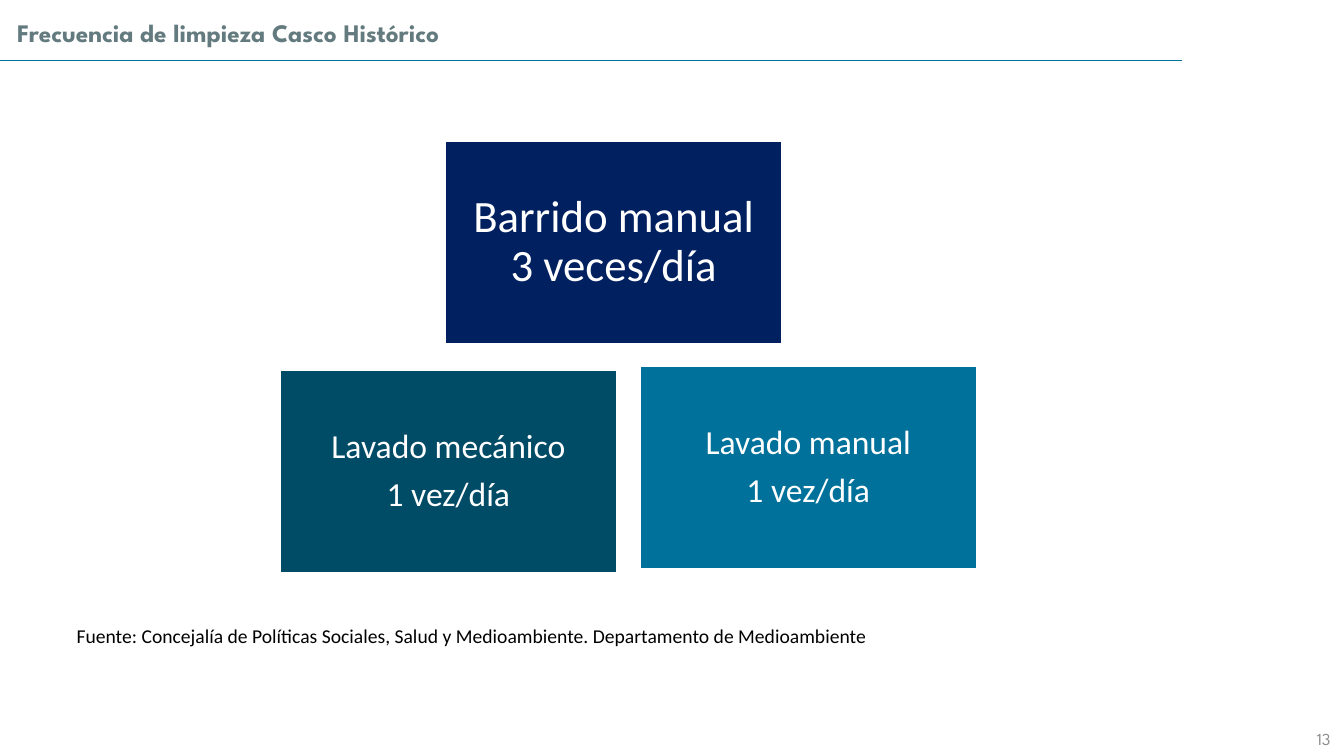
from lxml import etree
from pptx import Presentation
from pptx.dml.color import RGBColor
from pptx.enum.shapes import MSO_CONNECTOR, MSO_SHAPE
from pptx.enum.text import MSO_ANCHOR, PP_ALIGN
from pptx.oxml.ns import qn
from pptx.util import Cm, Pt

LEFT, CENTER, RIGHT = PP_ALIGN.LEFT, PP_ALIGN.CENTER, PP_ALIGN.RIGHT
TOP, MIDDLE, BOTTOM = MSO_ANCHOR.TOP, MSO_ANCHOR.MIDDLE, MSO_ANCHOR.BOTTOM
RECT = MSO_SHAPE.RECTANGLE
STRAIGHT = MSO_CONNECTOR.STRAIGHT
HEADING_FONT, BODY_FONT = "League Spartan", "Calibri"
TILE_W, TILE_H = 8.48, 5.11


def rgb(value):
    return RGBColor.from_string(value)


def write(tf, text, size, color, font=BODY_FONT, bold=False, align=LEFT,
          spacing=None, after=None):
    for i, line in enumerate(text.split("\n")):
        p = tf.add_paragraph() if i else tf.paragraphs[0]
        p.alignment = align
        p.line_spacing = spacing
        p.space_after = None if after is None else Pt(after)
        r = p.add_run()
        r.text = line
        r.font.name = font
        r.font.size = Pt(size)
        r.font.bold = bold
        r.font.color.rgb = rgb(color)


def add_label(s, box, text, size, color, anchor=TOP, **fmt):
    tf = s.shapes.add_textbox(*map(Cm, box)).text_frame
    tf.word_wrap = True
    tf.vertical_anchor = anchor
    write(tf, text, size, color, **fmt)


def add_header(s, box, title):
    x, y, w, h = box
    rule = s.shapes.add_connector(STRAIGHT, Cm(x), Cm(y + h), Cm(x + w), Cm(y + h))
    rule.line.color.rgb = rgb("00719A")
    rule.line.width = Pt(1)
    etree.SubElement(rule.element.spPr, qn("a:effectLst"))

    frame = s.shapes.add_table(1, 1, Cm(x + 0.3), Cm(y + 0.48), Cm(20.68), Cm(0.79))
    table = frame.table
    table.first_row = table.horz_banding = False
    cell = table.cell(0, 0)
    cell.fill.solid()
    cell.fill.fore_color.rgb = rgb("FFFFFF")
    cell.margin_left = cell.margin_right = Cm(0.13)
    cell.margin_top = cell.margin_bottom = 0
    cell.vertical_anchor = MIDDLE
    write(cell.text_frame, title, 18, "637B7F", font=HEADING_FONT, bold=True,
          spacing=1.15, after=10)


def add_tile(s, box, text, size, color, margin):
    sp = s.shapes.add_shape(RECT, *map(Cm, box))
    sp.shadow.inherit = False
    sp.fill.solid()
    sp.fill.fore_color.rgb = rgb(color)
    sp.line.color.rgb = rgb("FFFFFF")
    sp.line.width = Pt(1)
    tf = sp.text_frame
    tf.word_wrap = True
    tf.vertical_anchor = MIDDLE
    tf.margin_left = tf.margin_right = Cm(margin)
    tf.margin_top = tf.margin_bottom = Cm(margin)
    write(tf, text, size, "FFFFFF", align=CENTER, spacing=0.9, after=0.35 * size)


def add_frequencies(s, box):
    x, y = box[:2]
    tiles = [
        (4.17, 0, "Barrido manual 3 veces/día", 32, "002060", 0.33),
        (9.07, 5.66, "Lavado manual\n1 vez/día", 24, "00719A", 0.25),
        (0, 5.76, "Lavado mecánico\n1 vez/día", 24, "004B66", 0.25),
    ]
    for dx, dy, *content in tiles:
        add_tile(s, (x + dx, y + dy, TILE_W, TILE_H), *content)


def main():
    prs = Presentation()
    prs.slide_width, prs.slide_height = Cm(33.87), Cm(19.05)
    s = prs.slides.add_slide(prs.slide_layouts[6])
    add_header(s, (0, 0, 29.79, 1.52), "Frecuencia de limpieza Casco Histórico")
    add_label(s, (26.16, 17.98, 7.62, 1.02), "13", 12, "8C8C8C",
              anchor=BOTTOM, font=HEADING_FONT, align=RIGHT)
    add_label(s, (1.68, 15.6, 29.57, 0.86),
              "Fuente: Concejalía de Políticas Sociales, Salud y Medioambiente. "
              "Departamento de Medioambiente", 14, "000000")
    add_frequencies(s, (7.06, 3.56, 17.55, 10.87))
    prs.save("out.pptx")


if __name__ == "__main__":
    main()
